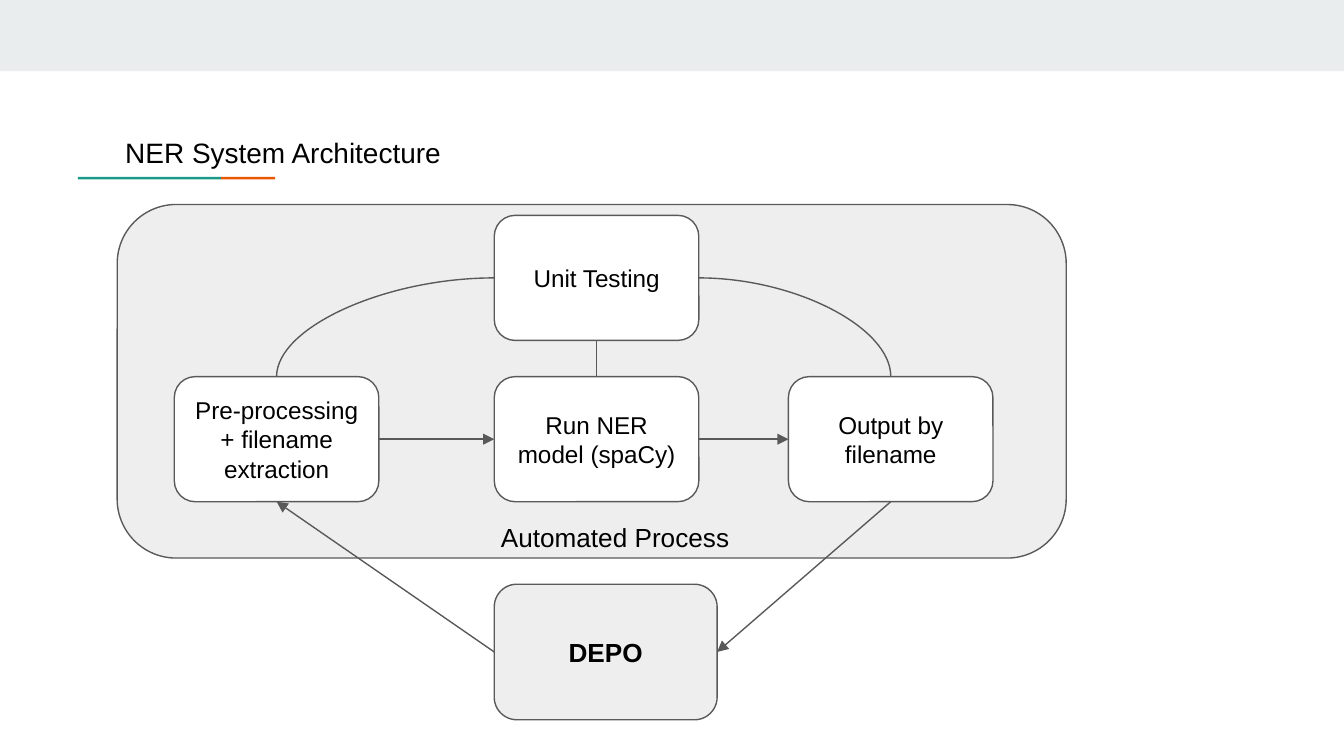
from dataclasses import dataclass
from typing import Any

from pptx import Presentation
from pptx.dml.color import RGBColor
from pptx.enum.shapes import MSO_CONNECTOR as Link, MSO_SHAPE as Shape
from pptx.enum.text import MSO_ANCHOR as Anchor, PP_ALIGN as Align
from pptx.oxml.ns import qn
from pptx.oxml.xmlchemy import OxmlElement
from pptx.util import Pt

TOP, LEFT, BOTTOM, RIGHT = range(4)


def color(value):
    return RGBColor.from_string(value)


def write(shape, text, size=13, bold=False, align=Align.CENTER, anchor=Anchor.MIDDLE,
          font="Arial", ink="000000"):
    frame = shape.text_frame
    frame.word_wrap = True
    frame.vertical_anchor = anchor
    frame.margin_left = frame.margin_right = Pt(7.2)
    frame.margin_top = frame.margin_bottom = Pt(7.2)
    paragraph = frame.paragraphs[0]
    paragraph.alignment = align
    run = paragraph.add_run()
    run.text = text
    run.font.name, run.font.size, run.font.bold = font, Pt(size), bold
    run.font.color.rgb = color(ink)


def side(shape, site):
    x = {LEFT: 0, RIGHT: shape.width}.get(site, shape.width // 2)
    y = {TOP: 0, BOTTOM: shape.height}.get(site, shape.height // 2)
    return shape.left + x, shape.top + y


@dataclass
class Diagram:
    """Draws the parts of an architecture diagram on one slide."""
    slide: Any
    stroke: str = "595959"
    weight: float = 0.75
    panel: str = "EEEEEE"

    def bar(self, x, y, width, height, fill, kind=Shape.RECTANGLE):
        shape = self.slide.shapes.add_shape(kind, Pt(x), Pt(y), Pt(width), Pt(height))
        shape.shadow.inherit = False
        shape.fill.solid()
        shape.fill.fore_color.rgb = color(fill)
        shape.line.fill.background()
        return shape

    def box(self, x, y, width=109.6, height=67, text="", fill="FFFFFF", **style):
        shape = self.bar(x, y, width, height, fill, Shape.ROUNDED_RECTANGLE)
        self.outline(shape.line)
        if text:
            write(shape, text, **style)
        return shape

    def label(self, x, y, text, size):
        shape = self.slide.shapes.add_textbox(Pt(x), Pt(y), Pt(320), Pt(37.4))
        write(shape, text, size=size, align=Align.LEFT, anchor=Anchor.TOP)

    def outline(self, line):
        line.color.rgb = color(self.stroke)
        line.width = Pt(self.weight)

    def link(self, start, start_site, end, end_site, kind=Link.STRAIGHT, arrow=False):
        link = self.slide.shapes.add_connector(
            kind, *side(start, start_site), *side(end, end_site))
        self.outline(link.line)
        properties = link._element.spPr
        properties.append(OxmlElement("a:effectLst"))
        if arrow:
            head = OxmlElement("a:tailEnd")
            head.set("type", "triangle")
            properties.find(qn("a:ln")).append(head)
        if kind == Link.STRAIGHT:
            link.begin_connect(start, start_site)
            link.end_connect(end, end_site)
        else:
            properties.find(qn("a:prstGeom")).set("prst", "curvedConnector2")


def main():
    deck = Presentation()
    deck.slide_width, deck.slide_height = Pt(720), Pt(405)
    diagram = Diagram(deck.slides.add_slide(deck.slide_layouts[6]))

    diagram.bar(0, 0, 720, 38.2, "E9EDEE")
    diagram.bar(118.4, 94.8, 29, 1.4, "EB5600")
    diagram.bar(41.8, 94.8, 76.6, 1.4, "1A9988")

    diagram.box(62.8, 109.6, 508.4, 189.4, fill=diagram.panel)
    storage = diagram.box(264.8, 313, 119.4, 72.6, "DEPO", diagram.panel, size=14, bold=True)
    preprocessing, model, output = [
        diagram.box(x, 201.8, text=text) for x, text in (
            (93.4, "Pre-processing + filename extraction"),
            (264.8, "Run NER model (spaCy)"),
            (422.4, "Output by filename"))]
    testing = diagram.box(264.8, 115.4, text="Unit Testing")

    for start, start_site, end, end_site in (
            (storage, LEFT, preprocessing, BOTTOM),
            (preprocessing, RIGHT, model, LEFT),
            (model, RIGHT, output, LEFT),
            (output, BOTTOM, storage, RIGHT)):
        diagram.link(start, start_site, end, end_site, arrow=True)
    diagram.link(testing, LEFT, preprocessing, TOP, Link.CURVE)
    diagram.link(testing, RIGHT, output, TOP, Link.CURVE)
    diagram.link(testing, BOTTOM, model, TOP)

    diagram.label(60, 65.4, "NER System Architecture", 15)
    diagram.label(261.2, 272, "Automated Process", 14)
    deck.save("out.pptx")


if __name__ == "__main__":
    main()
